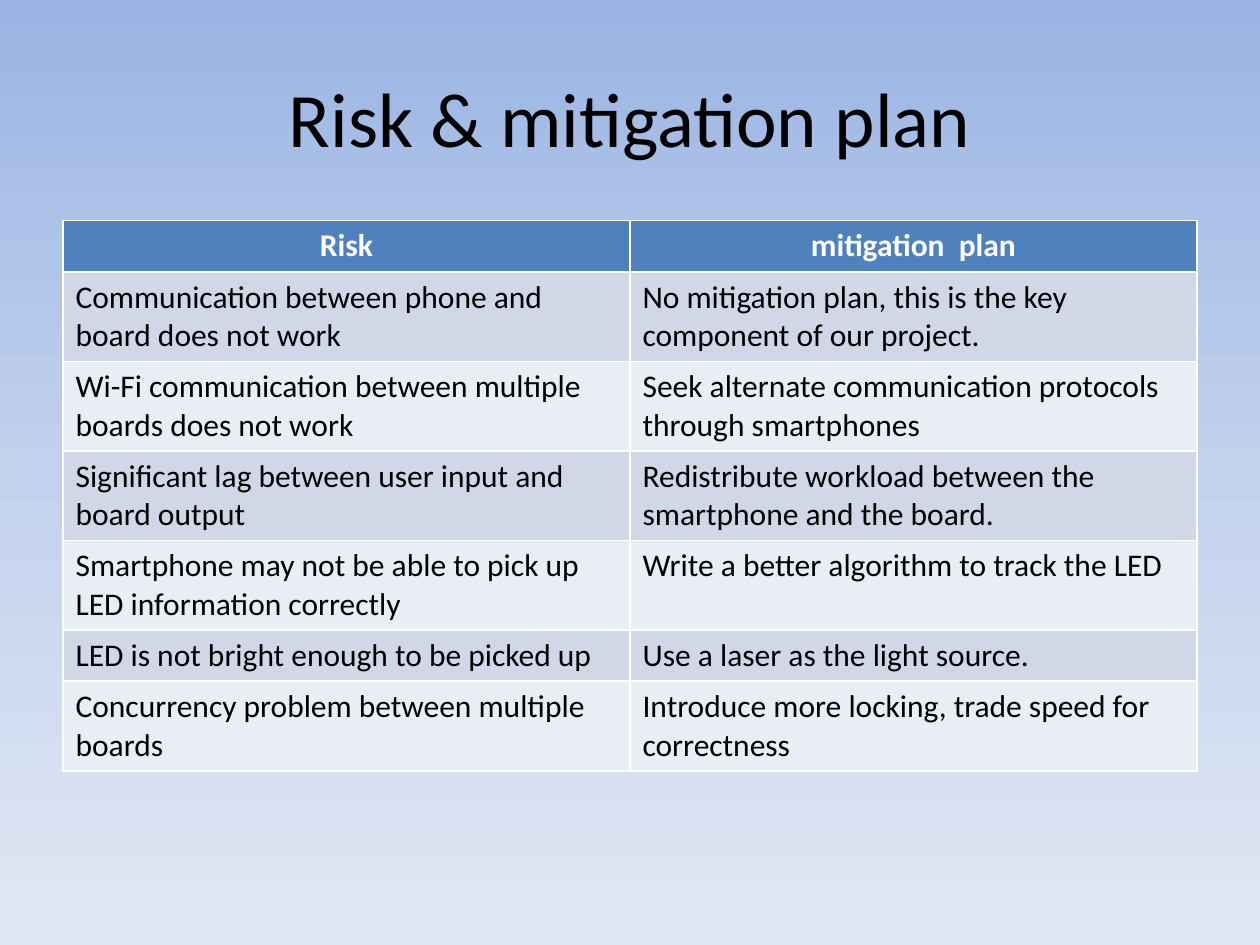
from copy import deepcopy

from pptx import Presentation
from pptx.dml.color import RGBColor
from pptx.enum.text import MSO_ANCHOR, PP_ALIGN
from pptx.oxml.ns import qn
from pptx.util import Inches, Pt

WIDE, HIGH = Inches(10), Inches(7.5)
EDGE = 0.05  # side margin as a share of the width
FONT = "Calibri"
HEAD, BANDS = "4F81BD", ("D0D8E8", "E9EDF4")
SKY = ((0, "9AB5E4"), (0.5, "C2D1ED"), (1, "E1E8F5"))
ROWS = (
    ("Risk", "mitigation  plan"),
    ("Communication between phone and board does not work",
     "No mitigation plan, this is the key component of our project."),
    ("Wi-Fi communication between multiple boards does not work",
     "Seek alternate communication protocols through smartphones"),
    ("Significant lag between user input and board output",
     "Redistribute workload between the smartphone and the board."),
    ("Smartphone may not be able to pick up LED information correctly",
     "Write a better algorithm to track the LED"),
    ("LED is not bright enough to be picked up",
     "Use a laser as the light source."),
    ("Concurrency problem between multiple boards",
     "Introduce more locking, trade speed for correctness"),
)


def color(code):
    return RGBColor.from_string(code)


def box(left, top, width, height):
    """Turn shares of the slide into lengths."""
    return (int(left * WIDE), int(top * HIGH),
            int(width * WIDE), int(height * HIGH))


def style(frame, size, code, align, bold=False):
    for par in frame.paragraphs:
        par.alignment = align
        for run in par.runs:
            font = run.font
            font.name, font.size, font.bold = FONT, Pt(size), bold
            font.color.rgb = color(code)


def paint_back(slide):
    fill = slide.background.fill
    fill.gradient()
    fill.gradient_angle = 270
    stops = slide.element.find(".//" + qn("a:gsLst"))
    stops.append(deepcopy(stops[-1]))
    for stop, (pos, code) in zip(fill.gradient_stops, SKY):
        stop.position = pos
        stop.color.rgb = color(code)


def add_title(slide, area):
    title = slide.shapes.title
    title.left, title.top, title.width, title.height = area
    frame = title.text_frame
    frame.text = "Risk & mitigation plan"
    frame.vertical_anchor = MSO_ANCHOR.MIDDLE
    style(frame, 44, "000000", PP_ALIGN.CENTER)


def add_risks(slide, area):
    """The header and band borders come from the default table style."""
    grid = slide.shapes.add_table(len(ROWS), len(ROWS[0]), *area).table
    for r, texts in enumerate(ROWS):
        top = r == 0
        for c, text in enumerate(texts):
            cell = grid.cell(r, c)
            cell.text_frame.text = text
            cell.fill.solid()
            cell.fill.fore_color.rgb = color(HEAD if top else BANDS[(r - 1) % 2])
            style(cell.text_frame, 18, "FFFFFF" if top else "000000",
                  PP_ALIGN.CENTER if top else PP_ALIGN.LEFT, top)


def main():
    deck = Presentation()
    deck.slide_width, deck.slide_height = WIDE, HIGH
    slide = deck.slides.add_slide(deck.slide_layouts.get_by_name("Title Only"))
    paint_back(slide)
    add_title(slide, box(EDGE, 0.04, 1 - 2 * EDGE, 1 / 6))
    add_risks(slide, box(EDGE, 7 / 30, 1 - 2 * EDGE, 0.38))
    deck.save("out.pptx")


if __name__ == "__main__":
    main()
